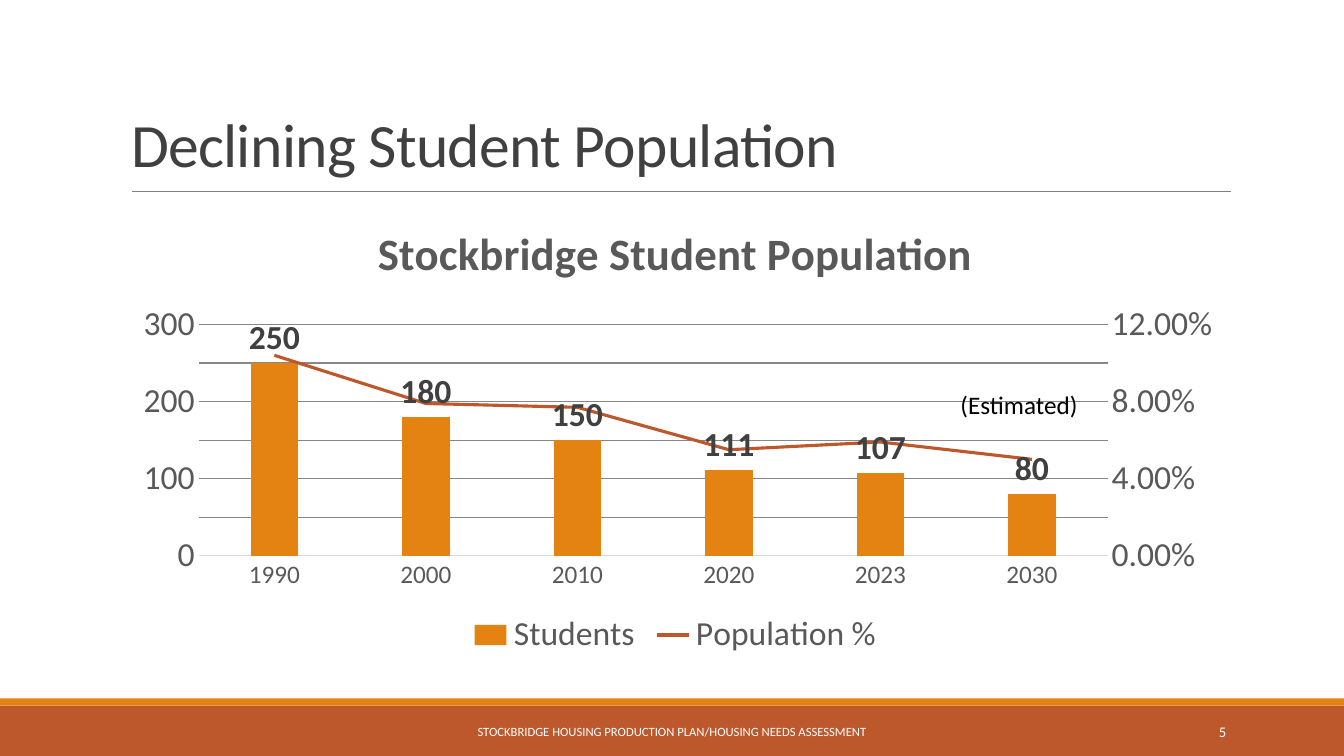
from dataclasses import dataclass

from lxml import etree
from pptx import Presentation
from pptx.chart.axis import ValueAxis
from pptx.chart.chart import Chart
from pptx.chart.data import CategoryChartData
from pptx.dml.color import RGBColor
from pptx.enum.chart import XL_CHART_TYPE as ChartType, XL_LABEL_POSITION as LabelPosition
from pptx.enum.chart import XL_LEGEND_POSITION as LegendPosition
from pptx.enum.chart import XL_MARKER_STYLE as MarkerStyle, XL_TICK_MARK as TickMark
from pptx.enum.shapes import MSO_CONNECTOR as Connector, MSO_SHAPE as Preset
from pptx.enum.text import MSO_ANCHOR as Anchor, MSO_AUTO_SIZE as AutoSize, PP_ALIGN as Align
from pptx.oxml import parse_xml
from pptx.oxml.ns import qn
from pptx.slide import Slide
from pptx.text.text import Font
from pptx.util import Emu, Inches, Pt

COLUMNS, ROWS = 160, 90
CELL = Inches(1) / 12
CHART_NS = 'xmlns:c="http://schemas.openxmlformats.org/drawingml/2006/chart"'


@dataclass(frozen=True)
class Theme:
    face: str = "Calibri"
    orange: str = "E48312"
    rust: str = "BD582C"
    dark: str = "404040"
    grey: str = "595959"
    rule: str = "808080"
    grid: str = "D9D9D9"
    white: str = "FFFFFF"
    black: str = "000000"
    title: float = 44
    chart_title: float = 32
    large: float = 24
    body: float = 18
    number: float = 10.5
    footer: float = 9


THEME = Theme()


@dataclass(frozen=True)
class Box:
    column: float
    row: float
    columns: float
    rows: float

    def place(self) -> tuple[Emu, ...]:
        return tuple(cells(n) for n in (self.column, self.row, self.columns, self.rows))


@dataclass(frozen=True)
class Label:
    text: str
    box: Box
    size: float
    color: str
    align: Align = Align.LEFT
    anchor: Anchor = Anchor.MIDDLE


TITLE = Label("Declining Student Population", Box(14.4, 3.72, 132, 18.36),
              THEME.title, THEME.dark, anchor=Anchor.BOTTOM)
BANDS = ((Box(0, 84, COLUMNS, 6), THEME.rust), (Box(0, 83.16, COLUMNS, 0.84), THEME.orange))
LABELS = (
    Label("STOCKBRIDGE HOUSING PRODUCTION PLAN/HOUSING NEEDS ASSESSMENT",
          Box(48.36, 84.72, 63.24, 4.8), THEME.footer, THEME.white, Align.CENTER),
    Label("5", Box(130, 84.72, 17.16, 4.8), THEME.number, THEME.white, Align.RIGHT),
    Label("(Estimated)", Box(113.16, 45.72, 18.24, 4.8), THEME.body, THEME.black,
          anchor=Anchor.TOP),
)
CHART_BOX = Box(14.4, 23.76, 132, 55.08)
PLOT_SHARES = {"x": 0.07, "y": 0.27, "w": 0.82, "h": 0.5}


def cells(count: float) -> Emu:
    return Emu(round(count * CELL))


def set_font(font: Font, size: float, color: str, bold: bool = False) -> None:
    font.name, font.size, font.bold = THEME.face, Pt(size), bold
    font.color.rgb = RGBColor.from_string(color)


def paint(part, color: str, width: float = 0) -> None:
    """Color a line of the given width, or a fill when there is no width."""
    if width:
        part.width = Pt(width)
    else:
        part.solid()
    target = part.color if width else part.fore_color
    target.rgb = RGBColor.from_string(color)


def write_label(shape, label: Label) -> None:
    shape.left, shape.top, shape.width, shape.height = label.box.place()
    frame = shape.text_frame
    frame.text, frame.word_wrap = label.text, True
    frame.auto_size, frame.vertical_anchor = AutoSize.NONE, label.anchor
    frame.paragraphs[0].alignment = label.align
    set_font(frame.paragraphs[0].font, label.size, label.color)


def draw_frame(slide: Slide) -> None:
    # Bottom bands
    for box, color in BANDS:
        band = slide.shapes.add_shape(Preset.RECTANGLE, *box.place())
        band.shadow.inherit = False
        paint(band.fill, color)
        band.line.fill.background()
    # Title and the rule below it
    write_label(slide.shapes.title, TITLE)
    paragraph = slide.shapes.title.text_frame.paragraphs[0]
    paragraph.line_spacing = 0.85
    paragraph.runs[0]._r.get_or_add_rPr().set("spc", "-50")
    rule = slide.shapes.add_connector(
        Connector.STRAIGHT, cells(15.72), cells(22.8), cells(146.52), cells(22.8))
    paint(rule.line, THEME.rule, 0.5)
    etree.SubElement(rule._element.spPr, qn("a:effectLst"))


def move_to_second_axis(chart: Chart) -> ValueAxis:
    """Turn the last column series into a line on a right-hand axis."""
    plot_area = chart._chartSpace.chart.plotArea
    bars = plot_area.find(qn("c:barChart"))
    series = bars.findall(qn("c:ser"))[-1]
    for flag in series.findall(qn("c:invertIfNegative")):
        series.remove(flag)
    lines = parse_xml(
        f'<c:lineChart {CHART_NS}><c:grouping val="standard"/><c:varyColors val="0"/>'
        '<c:marker val="1"/><c:axId val="5001"/><c:axId val="5002"/></c:lineChart>')
    lines.insert(2, series)
    bars.addnext(lines)
    last_axis = plot_area.find(qn("c:valAx"))
    for tag, own, other, deleted, side, crossing in (
            ("catAx", 5001, 5002, 1, "b", "autoZero"), ("valAx", 5002, 5001, 0, "r", "max")):
        last_axis.addnext(parse_xml(
            f'<c:{tag} {CHART_NS}><c:axId val="{own}"/><c:scaling><c:orientation val="minMax"/>'
            f'</c:scaling><c:delete val="{deleted}"/><c:axPos val="{side}"/>'
            '<c:majorTickMark val="none"/><c:minorTickMark val="none"/><c:tickLblPos '
            f'val="nextTo"/><c:crossAx val="{other}"/><c:crosses val="{crossing}"/></c:{tag}>'))
        last_axis = last_axis.getnext()
    # Place the plot inside the chart
    for layout in plot_area.findall(qn("c:layout")):
        plot_area.remove(layout)
    shares = "".join(f'<c:{key} val="{share}"/>' for key, share in PLOT_SHARES.items())
    plot_area.insert(0, parse_xml(
        f'<c:layout {CHART_NS}><c:manualLayout><c:layoutTarget val="inner"/><c:xMode val="edge"/>'
        f'<c:yMode val="edge"/>{shares}</c:manualLayout></c:layout>'))
    return ValueAxis(last_axis)


def format_value_axis(axis: ValueAxis, top: float, step: float, pattern: str) -> None:
    axis.minimum_scale, axis.maximum_scale, axis.major_unit = 0, top, step
    axis.major_tick_mark = TickMark.NONE
    axis.format.line.fill.background()
    axis.tick_labels.number_format = pattern
    axis.tick_labels.number_format_is_linked = False
    set_font(axis.tick_labels.font, THEME.large, THEME.grey)


def draw_chart(slide: Slide) -> None:
    data = CategoryChartData()
    data.categories = ("1990", "2000", "2010", "2020", "2023", "2030")
    data.add_series("Students", (250, 180, 150, 111, 107, 80), "#,##0")
    data.add_series("Population %", (0.104, 0.079, 0.077, 0.055, 0.059, 0.05), "0.00%")
    kind = ChartType.COLUMN_CLUSTERED
    chart = slide.shapes.add_chart(kind, *CHART_BOX.place(), data).chart
    set_font(chart.font, THEME.body, THEME.black)
    # Title and legend
    heading = chart.chart_title.text_frame
    heading.text = "Stockbridge Student Population"
    set_font(heading.paragraphs[0].font, THEME.chart_title, THEME.grey, bold=True)
    chart.has_legend = True
    chart.legend.position, chart.legend.include_in_layout = LegendPosition.BOTTOM, False
    set_font(chart.legend.font, THEME.large, THEME.grey)
    # Axes
    format_value_axis(chart.value_axis, 300, 50, "#,##0")
    format_value_axis(move_to_second_axis(chart), 0.12, 0.02, "0.00%")
    years = chart.category_axis
    years.major_tick_mark = TickMark.NONE
    set_font(years.tick_labels.font, THEME.body, THEME.grey)
    for axis_part in (years, chart.value_axis.major_gridlines):
        paint(axis_part.format.line, THEME.grid, 0.75)
    # Columns and line
    columns, lines = chart.plots
    columns.gap_width, columns.overlap, columns.vary_by_categories = 219, -27, False
    students, population = columns.series[0], lines.series[0]
    paint(students.format.fill, THEME.orange)
    labels = students.data_labels
    labels.show_value, labels.position = True, LabelPosition.OUTSIDE_END
    set_font(labels.font, THEME.large, THEME.dark, bold=True)
    population.smooth, population.marker.style = False, MarkerStyle.NONE
    paint(population.format.line, THEME.rust, 2.25)


def main() -> None:
    presentation = Presentation()
    presentation.slide_width, presentation.slide_height = cells(COLUMNS), cells(ROWS)
    slide = presentation.slides.add_slide(presentation.slide_layouts[5])
    draw_frame(slide)
    draw_chart(slide)
    for label in LABELS:
        write_label(slide.shapes.add_textbox(*label.box.place()), label)
    presentation.save("out.pptx")


if __name__ == "__main__":
    main()
